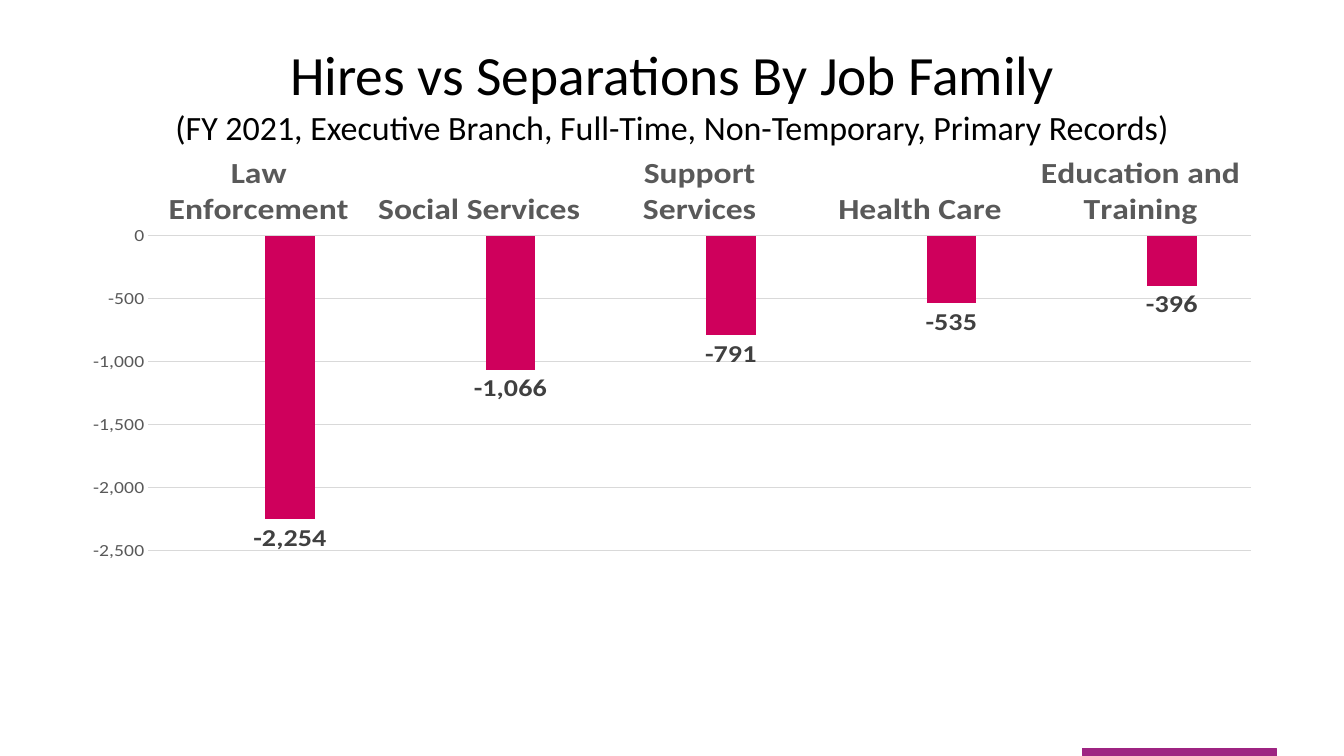
from lxml.etree import SubElement
from pptx import Presentation
from pptx.chart.data import CategoryChartData
from pptx.dml.color import RGBColor
from pptx.enum.chart import (XL_CHART_TYPE, XL_LABEL_POSITION, XL_TICK_LABEL_POSITION,
                             XL_TICK_MARK)
from pptx.enum.shapes import MSO_SHAPE
from pptx.enum.text import MSO_ANCHOR, PP_ALIGN
from pptx.oxml.ns import qn
from pptx.util import Cm, Pt

COLORS = {"ink": "000000", "plum": "9E2482", "pink": "CF005C",
          "axis": "595959", "label": "404040", "grid": "D9D9D9"}
FONT = "Calibri"
TITLE = [("Hires vs Separations By Job Family", 39.6),
         ("(FY 2021, Executive Branch, Full-Time, Non-Temporary, Primary Records)", 24.3)]
NET = {"Law Enforcement": -2254, "Social Services": -1066, "Support Services": -791,
       "Health Care": -535, "Education and Training": -396}
PLOT = {"x": 0.048, "y": 0.02, "w": 0.951, "h": 0.693}


def tint(name):
    return RGBColor.from_string(COLORS[name])


def style(item, values):
    for key, value in values.items():
        setattr(item, key, value)


def set_font(font, size, color, bold=False):
    style(font, {"name": FONT, "size": Pt(size), "bold": bold})
    font.color.rgb = tint(color)


def set_line(line, color):
    line.color.rgb = tint(color)
    line.width = Pt(0.75)


def add_title(slide, box):
    frame = slide.shapes.add_textbox(*box).text_frame
    style(frame, {"word_wrap": True, "vertical_anchor": MSO_ANCHOR.MIDDLE})
    para = frame.paragraphs[0]
    para.alignment = PP_ALIGN.CENTER
    for index, (text, size) in enumerate(TITLE):
        if index:
            para.add_line_break()
        run = para.add_run()
        run.text = text
        set_font(run.font, size, "ink")


def place_plot(chart):
    """Fix the inner plot area as fractions of the chart."""
    area = chart.element.find(".//" + qn("c:plotArea"))
    layout = area.find(qn("c:layout"))
    if layout is None:
        layout = SubElement(area, qn("c:layout"))
        area.insert(0, layout)
    manual = SubElement(layout, qn("c:manualLayout"))
    parts = {"layoutTarget": "inner", "xMode": "edge", "yMode": "edge", **PLOT}
    for name, value in parts.items():
        SubElement(manual, qn(f"c:{name}")).set("val", str(value))


def add_bars(slide, box):
    data = CategoryChartData()
    data.categories = list(NET)
    data.add_series("Series 1", [None] * len(NET))
    data.add_series("Series 2", list(NET.values()))
    chart = slide.shapes.add_chart(XL_CHART_TYPE.COLUMN_CLUSTERED, *box, data).chart
    style(chart, {"has_legend": False, "has_title": False})
    set_font(chart.font, 10, "ink")
    place_plot(chart)

    plot = chart.plots[0]
    style(plot, {"gap_width": 219, "overlap": -27, "vary_by_categories": False})
    for series, color in zip(plot.series, ("plum", "pink")):
        series.invert_if_negative = False
        series.format.fill.solid()
        series.format.fill.fore_color.rgb = tint(color)
        labels = series.data_labels
        style(labels, {"show_value": True, "number_format": "#,##0",
                       "number_format_is_linked": False,
                       "position": XL_LABEL_POSITION.OUTSIDE_END})
        set_font(labels.font, 20, "label", True)

    cat, val = chart.category_axis, chart.value_axis
    for axis, size, bold in ((cat, 24, True), (val, 14, False)):
        style(axis, {"major_tick_mark": XL_TICK_MARK.NONE,
                     "minor_tick_mark": XL_TICK_MARK.NONE})
        set_font(axis.tick_labels.font, size, "axis", bold)
    cat.tick_label_position = XL_TICK_LABEL_POSITION.HIGH
    set_line(cat.format.line, "grid")
    val.format.line.fill.background()
    style(val, {"minimum_scale": -2500, "maximum_scale": 0, "major_unit": 500})
    style(val.tick_labels, {"number_format": "#,##0", "number_format_is_linked": False})
    set_line(val.major_gridlines.format.line, "grid")


def add_tab(slide, box):
    tab = slide.shapes.add_shape(MSO_SHAPE.RECTANGLE, *box)
    tab.shadow.inherit = False
    tab.fill.solid()
    tab.fill.fore_color.rgb = tint("plum")
    set_line(tab.line, "plum")


def main():
    deck = Presentation()
    style(deck, {"slide_width": Cm(33.87), "slide_height": Cm(19.05)})
    slide = deck.slides.add_slide(deck.slide_layouts[6])
    add_tab(slide, (Cm(27.28), Cm(18.87), Cm(4.9), Cm(0.18)))
    add_title(slide, (Cm(1.7), Cm(0.76), Cm(30.48), Cm(3.18)))
    add_bars(slide, (Cm(2.34), Cm(3.94), Cm(29.21), Cm(13.21)))
    deck.save("out.pptx")


if __name__ == "__main__":
    main()
